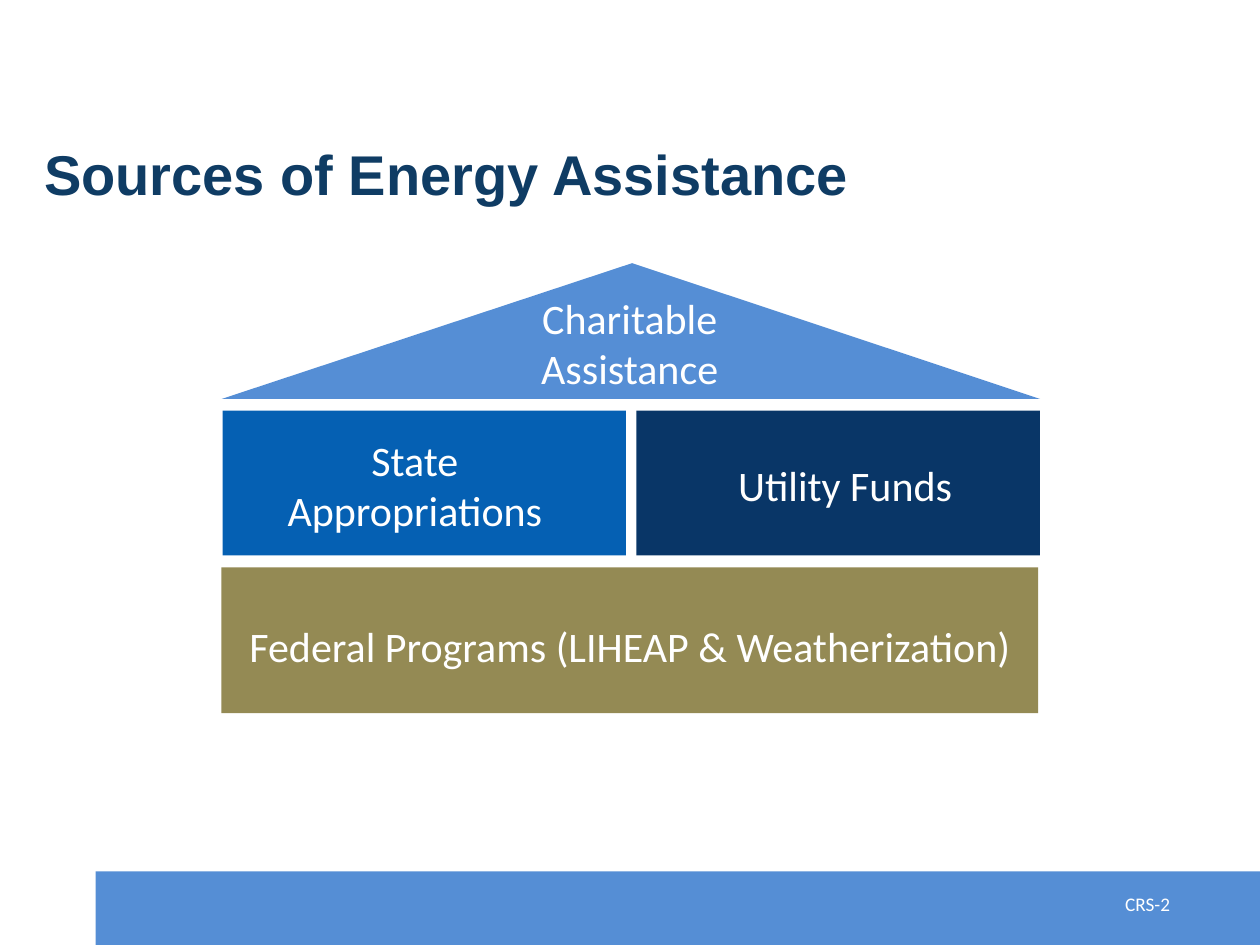
from pptx import Presentation
from pptx.dml.color import RGBColor
from pptx.enum import shapes, text
from pptx.util import Pt

WHITE = RGBColor(0xFF, 0xFF, 0xFF)
NAVY = RGBColor(0x0F, 0x3C, 0x64)
SKY = RGBColor(0x55, 0x8E, 0xD5)
BLUE = RGBColor(0x05, 0x60, 0xB3)
DARK = RGBColor(0x09, 0x36, 0x67)
OLIVE = RGBColor(0x94, 0x8A, 0x54)


class Deck:
    """Holds the text style and the current slide."""
    font = "Calibri"
    size = 24

    def __init__(self, slide):
        self.slide = slide

    def paint(self, shape, color):
        shape.shadow.inherit = False
        shape.fill.solid()
        shape.fill.fore_color.rgb = color
        shape.line.fill.background()

    def style(self, para, font, size, color, bold=False):
        for run in para.runs:
            run.font.name = font
            run.font.size = Pt(size)
            run.font.color.rgb = color
            run.font.bold = bold

    def title(self, words, left, top, width, height):
        box = self.slide.shapes.title
        box.left, box.top = Pt(left), Pt(top)
        box.width, box.height = Pt(width), Pt(height)
        frame = box.text_frame
        frame.text = words
        frame.auto_size = text.MSO_AUTO_SIZE.NONE
        frame.vertical_anchor = text.MSO_ANCHOR.BOTTOM
        para = frame.paragraphs[0]
        para.alignment = text.PP_ALIGN.LEFT
        self.style(para, "Arial", 32, NAVY, True)

    def block(self, color, left, top, width, height):
        shape = self.slide.shapes.add_shape(
            shapes.MSO_SHAPE.RECTANGLE,
            Pt(left), Pt(top), Pt(width), Pt(height))
        self.paint(shape, color)

    def roof(self, color, peak, left, right, base):
        pen = self.slide.shapes.build_freeform(Pt(peak[0]), Pt(peak[1]))
        pen.add_line_segments([(Pt(left), Pt(base)), (Pt(right), Pt(base))])
        self.paint(pen.convert_to_shape(), color)

    def label(self, words, left, top, width, height, size=size,
              align=text.PP_ALIGN.CENTER, anchor=text.MSO_ANCHOR.MIDDLE):
        box = self.slide.shapes.add_textbox(
            Pt(left), Pt(top), Pt(width), Pt(height))
        frame = box.text_frame
        frame.word_wrap = True
        frame.vertical_anchor = anchor
        frame.text = words
        para = frame.paragraphs[0]
        para.alignment = align
        self.style(para, self.font, size, WHITE)


def main():
    prs = Presentation()
    prs.slide_width, prs.slide_height = Pt(720), Pt(540)
    deck = Deck(prs.slides.add_slide(prs.slide_layouts[5]))

    # Footer band and page mark
    deck.block(SKY, 54.7, 498, 665.3, 42)
    deck.label("CRS-2", 635.8, 506.2, 54, 21, size=11,
               align=text.PP_ALIGN.LEFT, anchor=text.MSO_ANCHOR.TOP)

    deck.title("Sources of Energy Assistance", 18, 75.6, 684, 46)

    # House: roof, two rooms, base
    deck.roof(SKY, (361.2, 150.4), 126.6, 594.4, 228)
    deck.block(BLUE, 127.2, 234.6, 230.5, 82.8)
    deck.block(DARK, 363.7, 234.6, 230.5, 82.8)
    deck.block(OLIVE, 126.5, 324.2, 466.7, 83.3)

    # Labels
    wide = 209.5
    deck.label("Charitable Assistance", 255.1, 163, wide, 65.4)
    deck.label("State Appropriations", 132.3, 244.2, wide, 65.4)
    deck.label("Utility Funds", 378.2, 258.8, wide, 36.4)
    deck.label("Federal Programs (LIHEAP & Weatherization)",
               132.5, 350.8, 455, 36.4)

    prs.save("out.pptx")


if __name__ == "__main__":
    main()
